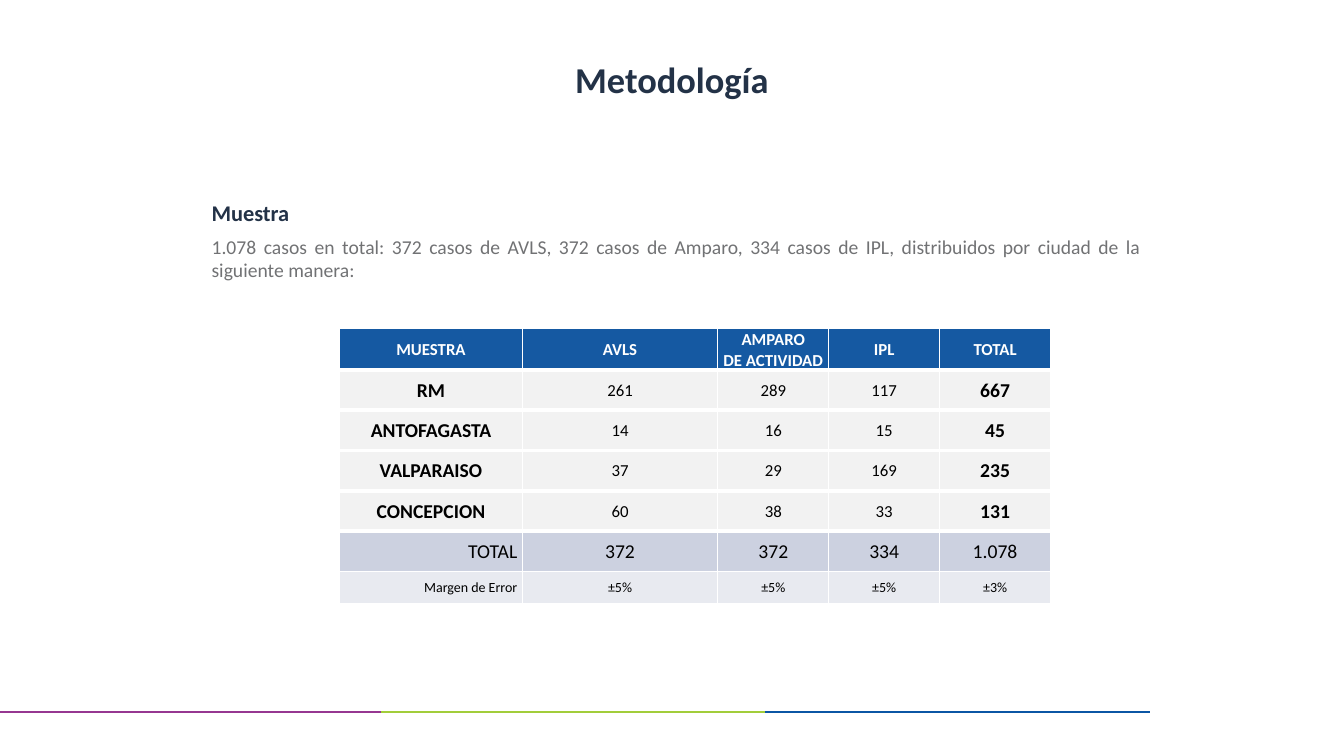
from lxml.etree import SubElement
from pptx import Presentation
from pptx.dml.color import RGBColor
from pptx.enum.shapes import MSO_CONNECTOR
from pptx.enum.text import MSO_ANCHOR, PP_ALIGN
from pptx.oxml.ns import qn
from pptx.util import Inches, Pt

# Content
TITLE = "Metodología"
HEADING = "Muestra"
SUMMARY = ("1.078 casos en total: 372 casos de AVLS, 372 casos de Amparo, "
           "334 casos de IPL, distribuidos por ciudad de la siguiente manera:")
SAMPLE = [
    ("MUESTRA", "AVLS", "AMPARO\nDE ACTIVIDAD", "IPL", "TOTAL"),
    ("RM", "261", "289", "117", "667"),
    ("ANTOFAGASTA", "14", "16", "15", "45"),
    ("VALPARAISO", "37", "29", "169", "235"),
    ("CONCEPCION", "60", "38", "33", "131"),
    ("TOTAL", "372", "372", "334", "1.078"),
    ("Margen de Error", "±5%", "±5%", "±5%", "±3%"),
]
COLUMN_WIDTHS = [1.81, 1.94, 1.1, 1.1, 1.1]
ROW_HEIGHTS = [0.4] * 6 + [0.32]

# Row styles: fill, text colour, outer size, inner size, outer bold, inner bold, top, bottom border
HEADER = ("1559A2", "FFFFFF", 12, 12, True, True, 1, 3)
CITY = ("F2F2F2", "000000", 14, 12, True, False, 3, 3)
TOTAL = ("CCD1E0", "000000", 14, 14, False, False, 3, 1)
MARGIN = ("E8EAF0", "000000", 10, 10, False, False, 1, 1)
ROW_STYLES = [HEADER] + [CITY] * 4 + [TOTAL, MARGIN]

FOOTER_LINES = [(0, 3.81, "963791"), (3.78, 7.59, "A2CD3A"), (7.59, 11.41, "0B56A4")]
NAVY, GREY, WHITE = "233247", "717274", "FFFFFF"


def colour(value):
    return RGBColor.from_string(value)


def style(para, size, text_colour, bold, align):
    para.alignment = align
    for span in para.runs:
        span.font.name = "Calibri"
        span.font.size = Pt(size)
        span.font.bold = bold
        span.font.color.rgb = colour(text_colour)


def add_text(page, left, top, width, height):
    box = page.shapes.add_textbox(*map(Inches, (left, top, width, height)))
    box.text_frame.word_wrap = True
    return box.text_frame


def set_borders(cell, top, bottom):
    properties = cell._tc.get_or_add_tcPr()
    for position, (side, points) in enumerate(
            (("lnL", 1), ("lnR", 1), ("lnT", top), ("lnB", bottom))):
        line = SubElement(properties, qn(f"a:{side}"), w=str(Pt(points)))
        fill = SubElement(line, qn("a:solidFill"))
        SubElement(fill, qn("a:srgbClr"), val=WHITE)
        properties.insert(position, line)


deck = Presentation()
deck.slide_width, deck.slide_height = Inches(13.33), Inches(7.5)
page = deck.slides.add_slide(deck.slide_layouts[6])

# Footer lines
for start, end, line_colour in FOOTER_LINES:
    line = page.shapes.add_connector(MSO_CONNECTOR.STRAIGHT, Inches(start), Inches(7.06),
                                     Inches(end), Inches(7.06))
    line.line.color.rgb = colour(line_colour)
    line.line.width = Pt(1.5)
    SubElement(line._element.spPr, qn("a:effectLst"))

# Title
frame = add_text(page, 1.27, 0.47, 10.79, 0.69)
frame.vertical_anchor = MSO_ANCHOR.MIDDLE
frame.text = TITLE
frame.paragraphs[0].line_spacing = 0.9
style(frame.paragraphs[0], 26, NAVY, True, PP_ALIGN.CENTER)

# Sample description
frame = add_text(page, 2, 1.93, 9.42, 1.25)
frame.text = HEADING
style(frame.paragraphs[0], 16, NAVY, True, PP_ALIGN.JUSTIFY)
summary = frame.add_paragraph()
summary.text = SUMMARY
summary.space_before = Pt(6)
style(summary, 14, GREY, False, PP_ALIGN.JUSTIFY)

# Sample table
table = page.shapes.add_table(
    len(SAMPLE), len(COLUMN_WIDTHS), Inches(3.37), Inches(3.26),
    Inches(sum(COLUMN_WIDTHS)), Inches(sum(ROW_HEIGHTS))).table
for column, width in zip(table.columns, COLUMN_WIDTHS):
    column.width = Inches(width)
for row, height, texts, row_style in zip(table.rows, ROW_HEIGHTS, SAMPLE, ROW_STYLES):
    row.height = Inches(height)
    fill, text_colour, outer_size, inner_size, outer_bold, inner_bold, top, bottom = row_style
    for index, (cell, text) in enumerate(zip(row.cells, texts)):
        outer = index in (0, len(texts) - 1)
        right = index == 0 and row_style in (TOTAL, MARGIN)
        cell.text_frame.text = text
        cell.vertical_anchor = MSO_ANCHOR.MIDDLE
        cell.margin_left = cell.margin_top = Inches(0.01)
        cell.margin_right = Inches(0.05 if right else 0.01)
        cell.margin_bottom = 0
        cell.fill.solid()
        cell.fill.fore_color.rgb = colour(fill)
        set_borders(cell, top, bottom)
        for para in cell.text_frame.paragraphs:
            style(para, outer_size if outer else inner_size, text_colour,
                  outer_bold if outer else inner_bold,
                  PP_ALIGN.RIGHT if right else PP_ALIGN.CENTER)

deck.save("out.pptx")
